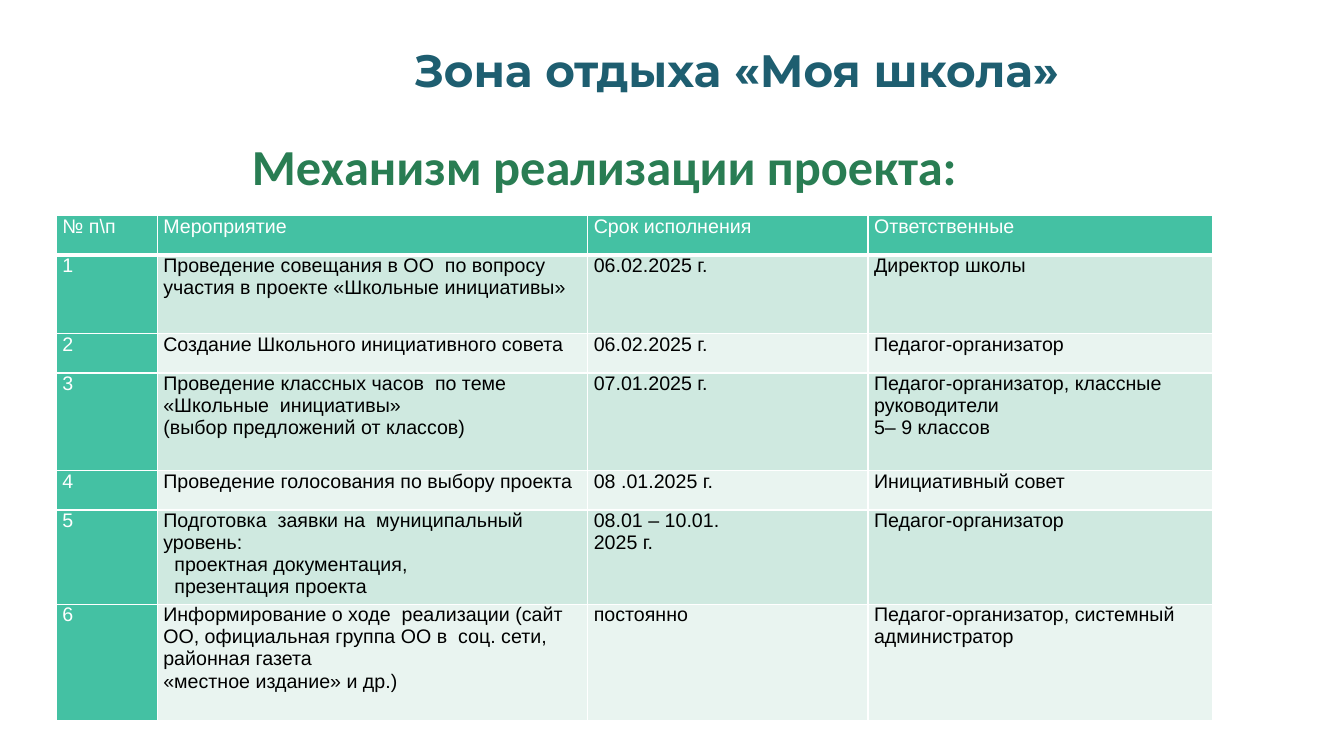
import pptx
import pptx.dml.color
import pptx.enum.text
import pptx.util
from dataclasses import dataclass
from lxml import etree
from pptx.util import Inches

# Content: a cell is a list of paragraphs; "-" entries are indented sub-items
TITLE = "Зона отдыха «Моя школа»"
HEADING = "Механизм реализации проекта:"
HEADER = ["№ п\\п", "Мероприятие", "Срок исполнения", "Ответственные"]
EVENTS = [
    (["Проведение совещания в ОО  по вопросу участия в проекте «Школьные инициативы»"],
     ["06.02.2025 г."], ["Директор школы"]),
    (["Создание Школьного инициативного совета"],
     ["06.02.2025 г."], ["Педагог-организатор"]),
    (["Проведение классных часов  по теме «Школьные  инициативы»",
      "(выбор предложений от классов)"],
     ["07.01.2025 г."],
     ["Педагог-организатор, классные руководители", "5– 9 классов"]),
    (["Проведение голосования по выбору проекта"],
     ["08 .01.2025 г."], ["Инициативный совет"]),
    (["Подготовка  заявки на  муниципальный уровень:",
      "-проектная документация,", "-презентация проекта"],
     ["08.01 – 10.01.", "2025 г."], ["Педагог-организатор"]),
    (["Информирование о ходе  реализации (сайт ОО, официальная группа ОО в  соц. сети, "
      "районная газета", "«местное издание» и др.)"],
     ["постоянно"], ["Педагог-организатор, системный администратор"]),
]
COLUMN_WIDTHS = [1, 4.27, 2.78, 3.42]
ROW_HEIGHTS = [0.39, 0.78, 0.39, 0.97, 0.39, 0.93, 1.16]


@dataclass(frozen=True)
class Theme:
    title: str = "1E5E70"
    heading: str = "297D53"
    accent: str = "44C1A3"
    bands: tuple = ("CFE9E0", "E9F4F0")
    light: str = "FFFFFF"
    dark: str = "000000"
    title_size: float = 32.4
    heading_size: float = 36
    cell_size: float = 14
    rule: float = 1
    header_rule: float = 3


THEME = Theme()


def rgb(value):
    return pptx.dml.color.RGBColor.from_string(value)


def add_text(para, text, font, size, color, bold=False):
    span = para.add_run()
    span.text = text
    span.font.name = font
    span.font.size = pptx.util.Pt(size)
    span.font.bold = bold
    span.font.color.rgb = rgb(color)


def add_line(page, left, top, width, height, wrap, inset_top, *style):
    box = page.shapes.add_textbox(*map(Inches, (left, top, width, height)))
    frame = box.text_frame
    frame.word_wrap = wrap
    frame.margin_top = Inches(inset_top)
    frame.vertical_anchor = pptx.enum.text.MSO_ANCHOR.TOP
    add_text(frame.paragraphs[0], *style, bold=True)


def add_border(cell, side, width):
    properties = cell._tc.get_or_add_tcPr()
    line = etree.SubElement(properties, pptx.oxml.ns.qn("a:ln" + side),
                            w=str(pptx.util.Pt(width)))
    fill = etree.SubElement(line, pptx.oxml.ns.qn("a:solidFill"))
    etree.SubElement(fill, pptx.oxml.ns.qn("a:srgbClr"), val=THEME.light)


def fill_cell(cell, lines, row, column):
    # Borders come before the fill in the cell properties
    for side in "LRTB":
        under_header = (row, side) in ((0, "B"), (1, "T"))
        add_border(cell, side, THEME.header_rule if under_header else THEME.rule)
    accent = row == 0 or column == 0
    cell.fill.solid()
    cell.fill.fore_color.rgb = rgb(THEME.accent if accent else THEME.bands[(row - 1) % 2])
    cell.margin_left = cell.margin_right = Inches(0.06)
    cell.margin_top = cell.margin_bottom = 0
    for index, line in enumerate(lines):
        frame = cell.text_frame
        para = frame.add_paragraph() if index else frame.paragraphs[0]
        if line.startswith("-"):
            para._p.get_or_add_pPr().set("marL", str(Inches(0.11)))
        add_text(para, line.removeprefix("-"), "Arial", THEME.cell_size,
                 THEME.light if accent else THEME.dark)


def main():
    deck = pptx.Presentation()
    deck.slide_width, deck.slide_height = Inches(13.33), Inches(7.5)
    page = deck.slides.add_slide(deck.slide_layouts[6])

    # Title and heading
    add_line(page, 4.01, 0.4, 9.32, 1.45, True, 0.02,
             TITLE, "Montserrat", THEME.title_size, THEME.title)
    add_line(page, 2.4, 1.29, 7.26, 0.71, False, 0.05,
             HEADING, "Calibri", THEME.heading_size, THEME.heading)

    # Schedule table
    rows = [[[name] for name in HEADER]]
    rows += [[[str(number)], *event] for number, event in enumerate(EVENTS, 1)]
    table = page.shapes.add_table(
        len(rows), len(HEADER), Inches(0.56), Inches(2.14),
        Inches(sum(COLUMN_WIDTHS)), Inches(sum(ROW_HEIGHTS))).table
    for column, width in zip(table.columns, COLUMN_WIDTHS):
        column.width = Inches(width)
    for row, height in zip(table.rows, ROW_HEIGHTS):
        row.height = Inches(height)
    for r, cells in enumerate(rows):
        for c, lines in enumerate(cells):
            fill_cell(table.cell(r, c), lines, r, c)

    deck.save("out.pptx")


if __name__ == "__main__":
    main()
